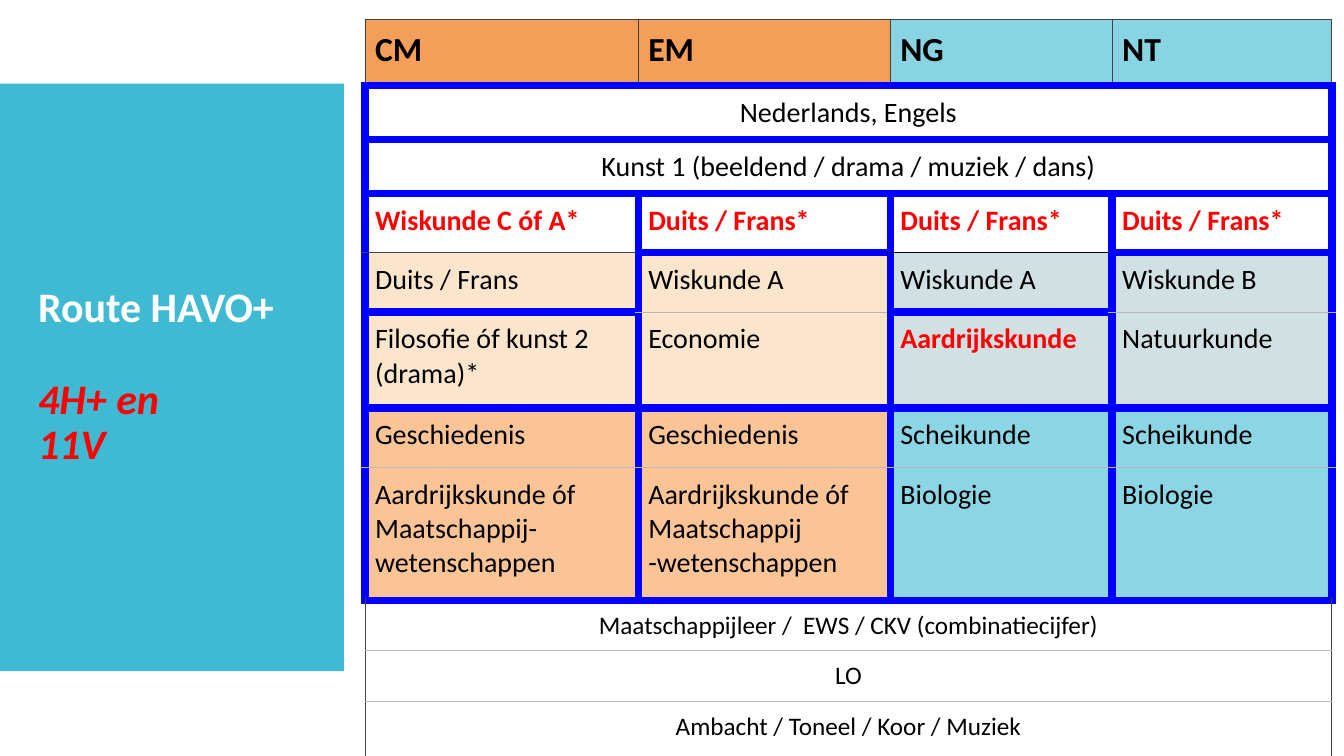
from lxml import etree
from pptx import Presentation
from pptx.dml.color import RGBColor
from pptx.enum.shapes import MSO_SHAPE
from pptx.enum.text import MSO_ANCHOR, PP_ALIGN
from pptx.oxml.ns import qn
from pptx.util import Inches, Pt

COLOURS = {
    "white": "FFFFFF", "black": "000000", "red": "FF0000", "blue": "0000FF",
    "teal": "40BAD2", "silver": "C8C8C8", "dark": "434343", "grey": "B7B7B7",
    "orange": "EE7008", "apricot": "FAA863", "cream": "FCE5CD",
    "mist": "D0E0E3", "aqua": "8BD5E4",
}
PANELS = [
    ((0, 0.83, 3.77, 5.83), "teal", 100, None),
    ((12.92, 0.83, 0.42, 5.83), "silver", 50, None),
    ((3.42, 0.08, 1.59, 7.08), "white", 100, "white"),
    ((11.75, 0.08, 1.59, 7.08), "white", 100, "white"),
]
TITLE_BOX = (0.28, 1.23, 3.22, 5.03)
TITLE = [
    ("Route HAVO+", "white", False, 0),
    ("4H+ en\v11V", "red", True, 33),
]
TABLE_BOX = (3.62, 0.19, 9.59, 7.03)
COLUMN_WIDTHS = [2.71, 2.5, 2.2, 2.18]
ROW_HEIGHTS = [0.66, 0.46, 0.52, 0.59, 0.59, 0.95, 0.59, 1.32, 0.43, 0.37, 0.55]
ROWS = [
    ["CM", "EM", "NG", "NT"],
    ["Nederlands, Engels"],
    ["Kunst 1 (beeldend / drama / muziek / dans)"],
    ["Wiskunde C óf A*", "Duits / Frans*", "Duits / Frans*", "Duits / Frans*"],
    ["Duits / Frans", "Wiskunde A", "Wiskunde A", "Wiskunde B"],
    ["Filosofie óf kunst 2 (drama)*", "Economie", "Aardrijkskunde", "Natuurkunde"],
    ["Geschiedenis", "Geschiedenis", "Scheikunde", "Scheikunde"],
    ["Aardrijkskunde óf Maatschappij- wetenschappen",
     "Aardrijkskunde óf Maatschappij -wetenschappen", "Biologie", "Biologie"],
    ["Maatschappijleer /  EWS / CKV (combinatiecijfer)"],
    ["LO"],
    ["Ambacht / Toneel / Koor / Muziek"],
]
HEADER_FILLS = [("orange", 67), ("teal", 62)]
CHOICE_FILLS = [("cream", 100), ("mist", 100)]
PROFILE_FILLS = [("apricot", 67), ("aqua", 100)]
ROW_FILLS = {0: HEADER_FILLS, 4: CHOICE_FILLS, 5: CHOICE_FILLS,
             6: PROFILE_FILLS, 7: PROFILE_FILLS}
RED_CELLS = {(3, 0), (3, 1), (3, 2), (3, 3), (5, 2)}
FRAMED_ROWS = range(1, 8)
LINES = {"B": ("blue", 6), "d": ("dark", 0.75), "g": ("grey", 0.75), "k": ("black", 0.75)}
ROW_EDGES = ["dddd", "BBBB", "BBBB", "BBBB", "dBkB", "BgBg",
             "BBBB", "gggg", "BBBB", "gggg", "gggg", "dddd"]


def colour(name):
    return RGBColor.from_string(COLOURS[name])


def set_fill(fill, element, name, opacity):
    fill.solid()
    fill.fore_color.rgb = colour(name)
    if opacity < 100:
        tint = element.find(qn("a:solidFill")).find(qn("a:srgbClr"))
        etree.SubElement(tint, qn("a:alpha"), val=str(opacity * 1000))


def format_span(span, name, formats):
    span.font.name = "Calibri"
    span.font.color.rgb = colour(name)
    for attribute, value in formats.items():
        setattr(span.font, attribute, value)


def set_borders(properties, edges):
    for index, (side, key) in enumerate(edges.items()):
        name, width = LINES[key]
        line = etree.Element(qn(f"a:ln{side}"), w=str(Pt(width)), cmpd="sng")
        fill = etree.SubElement(line, qn("a:solidFill"))
        etree.SubElement(fill, qn("a:srgbClr"), val=COLOURS[name])
        etree.SubElement(line, qn("a:prstDash"), val="solid")
        properties.insert(index, line)


def add_panels(page):
    for place, name, opacity, outline in PANELS:
        panel = page.shapes.add_shape(MSO_SHAPE.RECTANGLE, *map(Inches, place))
        panel.shadow.inherit = False
        set_fill(panel.fill, panel.element.spPr, name, opacity)
        if outline:
            panel.line.color.rgb = colour(outline)
            panel.line.width = Pt(0.75)
        else:
            panel.line.fill.background()


def add_title(page):
    frame = page.shapes.add_textbox(*map(Inches, TITLE_BOX)).text_frame
    frame.word_wrap = True
    frame.vertical_anchor = MSO_ANCHOR.MIDDLE
    for index, (words, name, italic, gap) in enumerate(TITLE):
        para = frame.add_paragraph() if index else frame.paragraphs[0]
        para.text = words
        para.line_spacing = 0.9
        para.space_before = Pt(gap)
        for span in para.runs:
            format_span(span, name, {"size": Pt(30), "bold": True, "italic": italic})


def write_cell(cell, words, row, column, centred):
    cell.text = words
    para = cell.text_frame.paragraphs[0]
    para.alignment = PP_ALIGN.CENTER if centred else PP_ALIGN.LEFT
    red = (row, column) in RED_CELLS
    size = 24 if row == 0 else 20 if row in FRAMED_ROWS else 18
    for span in para.runs:
        format_span(span, "red" if red else "black",
                    {"size": Pt(size), "bold": red or row == 0})


def add_subjects(page):
    table = page.shapes.add_table(len(ROWS), len(COLUMN_WIDTHS),
                                  *map(Inches, TABLE_BOX)).table
    table.first_row = table.horz_banding = False
    for column, width in enumerate(COLUMN_WIDTHS):
        table.columns[column].width = Inches(width)
    for row, words in enumerate(ROWS):
        table.rows[row].height = Inches(ROW_HEIGHTS[row])
        merged = len(words) == 1
        if merged:
            table.cell(row, 0).merge(table.cell(row, len(COLUMN_WIDTHS) - 1))
        side = "B" if row in FRAMED_ROWS else "d"
        fills = ROW_FILLS.get(row, [("white", 100)] * 2)
        for column in range(len(COLUMN_WIDTHS)):
            cell = table.cell(row, column)
            for margin in ("left", "right", "top", "bottom"):
                setattr(cell, f"margin_{margin}", Inches(0.1))
            properties = cell._tc.get_or_add_tcPr()
            set_fill(cell.fill, properties, *fills[column // 2])
            set_borders(properties, {"L": side, "R": side,
                                     "T": ROW_EDGES[row][column],
                                     "B": ROW_EDGES[row + 1][column]})
            if column < len(words):
                write_cell(cell, words[column], row, column, merged)


def main():
    deck = Presentation()
    deck.slide_width, deck.slide_height = Inches(13.33), Inches(7.5)
    page = deck.slides.add_slide(deck.slide_layouts[6])
    add_panels(page)
    add_title(page)
    add_subjects(page)
    deck.save("out.pptx")


if __name__ == "__main__":
    main()
